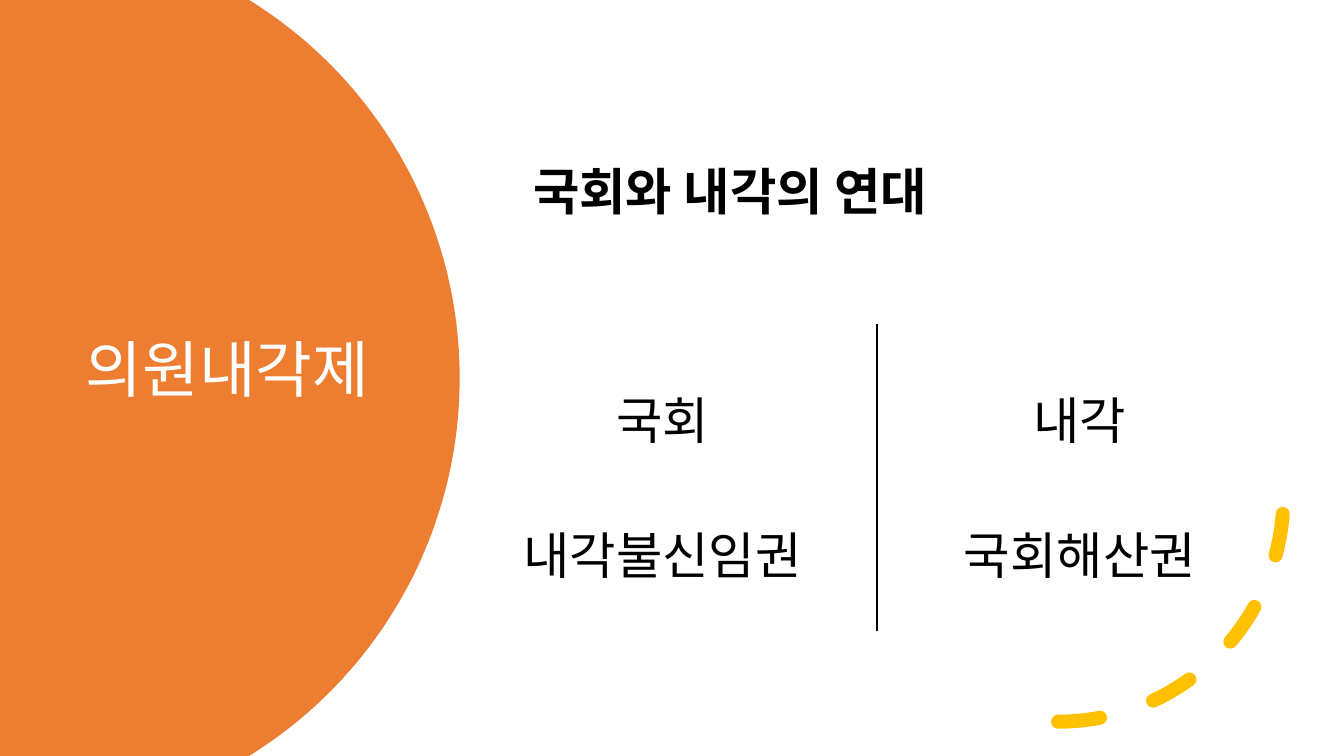
from math import asin, cos, sin

from pptx import Presentation
from pptx.dml.color import RGBColor
from pptx.enum.dml import MSO_LINE
from pptx.enum.shapes import MSO_CONNECTOR, MSO_SHAPE
from pptx.enum.text import MSO_ANCHOR, PP_ALIGN
from pptx.oxml.ns import qn
from pptx.util import Inches, Pt

FONT = "Noto Sans CJK KR"
COLORS = {"orange": "ED7D31", "gold": "FFC000", "black": "000000", "white": "FFFFFF"}
WIDTH, HEIGHT = 13.33, 7.5


def color(name):
    """Return the named colour."""
    return RGBColor.from_string(COLORS[name])


def write(s, lines, size=36, ink="black", bold=False, align=PP_ALIGN.LEFT,
          anchor=MSO_ANCHOR.TOP, spacing=0.9, before=10):
    """Fill a shape with formatted paragraphs."""
    tf = s.text_frame
    tf.word_wrap = True
    tf.vertical_anchor = anchor
    for i, line in enumerate(lines):
        p = tf.paragraphs[0] if i == 0 else tf.add_paragraph()
        p.alignment, p.line_spacing, p.space_before = align, spacing, Pt(before)
        r = p.add_run()
        r.text = line
        r.font.size, r.font.bold, r.font.name = Pt(size), bold, FONT
        r.font.color.rgb = color(ink)
        ea = r._r.get_or_add_rPr().makeelement(qn("a:ea"), {"typeface": FONT})
        r.font._element.find(qn("a:latin")).addnext(ea)


def add_text(sp, x, y, w, h, lines, **fmt):
    """Add a text box."""
    write(sp.add_textbox(Inches(x), Inches(y), Inches(w), Inches(h)), lines, **fmt)


def add_disc(sp, right, radius, steps=120):
    """Add a disc cut off by the slide edges, behind everything else."""
    mid = HEIGHT / 2
    reach = asin(mid / radius)
    angles = [reach * (2 * i / steps - 1) for i in range(steps + 1)]
    points = [(right - radius + radius * cos(a), mid + radius * sin(a)) for a in angles]
    fb = sp.build_freeform(0, 0, scale=Inches(1) / 1000)
    fb.add_line_segments([(x * 1000, y * 1000) for x, y in points] + [(0, HEIGHT * 1000)])
    s = fb.convert_to_shape()
    s.shadow.inherit = False
    s.fill.solid()
    s.fill.fore_color.rgb = color("orange")
    s.line.fill.background()
    sp._spTree.insert(2, s._element)


def add_dashed_arc(sp, x, y, size):
    """Add a dashed quarter circle at the lower right."""
    s = sp.add_shape(MSO_SHAPE.ARC, Inches(x), Inches(y), Inches(size), Inches(size))
    s.shadow.inherit = False
    s.fill.background()
    s.line.color.rgb = color("gold")
    s.line.width = Pt(10)
    s.line.dash_style = MSO_LINE.DASH
    s._element.spPr.find(qn("a:ln")).set("cap", "rnd")
    s._element.spPr.find(qn("a:xfrm")).set("flipV", "1")


def add_divider(sp, x, top, bottom):
    """Add a vertical line."""
    s = sp.add_connector(MSO_CONNECTOR.STRAIGHT, Inches(x), Inches(top),
                         Inches(x), Inches(bottom))
    s.line.color.rgb = color("black")
    s.line.width = Pt(1.5)
    spPr = s._element.spPr
    spPr.append(spPr.makeelement(qn("a:effectLst"), {}))


def main():
    """Build the slide."""
    prs = Presentation()
    prs.slide_width, prs.slide_height = Inches(WIDTH), Inches(HEIGHT)
    slide = prs.slides.add_slide(prs.slide_layouts[5])
    sp = slide.shapes
    add_disc(sp, right=4.56, radius=4.41)

    title = sp.title
    title.left, title.top = Inches(0.75), Inches(1.26)
    title.width, title.height = Inches(3.5), Inches(4.88)
    write(title, ["의원내각제"], size=44, ink="white", anchor=MSO_ANCHOR.MIDDLE, before=0)

    add_dashed_arc(sp, 8.26, 2.69, 4.47)
    add_text(sp, 5.19, 1.36, 4.65, 1.13, ["국회와 내각의 연대"],
             bold=True, anchor=MSO_ANCHOR.MIDDLE)
    for x, lines in ((4.56, ["국회", "내각불신임권"]), (8.7, ["내각", "국회해산권"])):
        add_text(sp, x, 3.21, 4.02, 2.66, lines, align=PP_ALIGN.CENTER, spacing=2.0)
    add_divider(sp, 8.7, 3.21, 6.26)
    prs.save("out.pptx")


if __name__ == "__main__":
    main()
